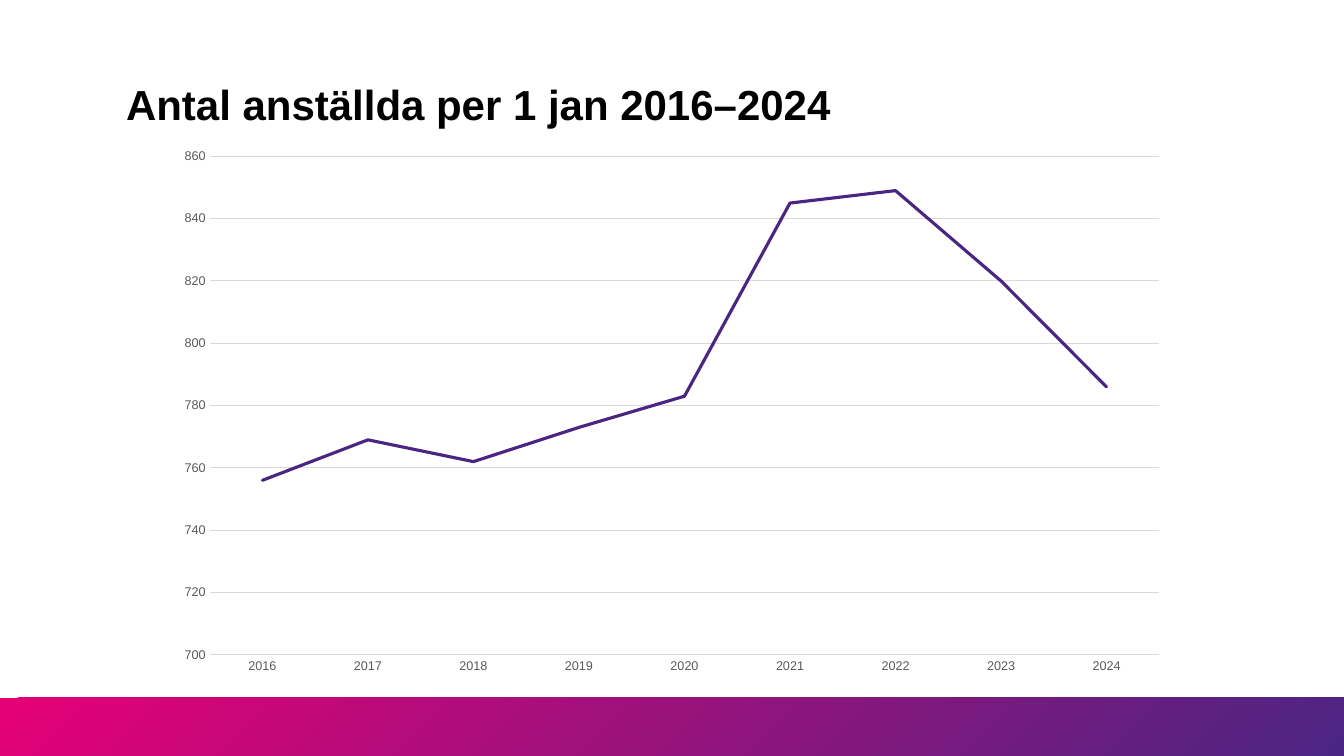
"""Build a slide with a line chart of the number of employees per year."""
from dataclasses import dataclass

import pptx
import pptx.chart.data
import pptx.dml.color
import pptx.enum.chart
import pptx.enum.dml
import pptx.enum.shapes
import pptx.enum.text
import pptx.util

Inches = pptx.util.Inches
Pt = pptx.util.Pt

FONT = "Arial"
PINK, PURPLE = "E50076", "4B2582"
BLACK, LABEL_GREY, LINE_GREY = "000000", "595959", "D9D9D9"
EMPLOYEES = {
    "2016": 756, "2017": 769, "2018": 762, "2019": 773, "2020": 783,
    "2021": 845, "2022": 849, "2023": 820, "2024": 786,
}


@dataclass(frozen=True)
class Box:
    left: float
    top: float
    width: float
    height: float

    def lengths(self) -> tuple:
        return tuple(Inches(v) for v in (self.left, self.top, self.width, self.height))


def set_color(color_format, hex_color: str) -> None:
    color_format.rgb = pptx.dml.color.RGBColor.from_string(hex_color)


def format_font(font, *, size: float, color: str, bold: bool = False) -> None:
    font.name = FONT
    font.size = Pt(size)
    font.bold = bold
    set_color(font.color, color)


def format_line(line, *, color: str, width: float) -> None:
    line.fill.solid()
    set_color(line.fill.fore_color, color)
    line.width = Pt(width)


def write_text(shape, text: str, *, size: float, color: str, bold: bool = False,
               line_spacing: float = 1.0) -> None:
    frame = shape.text_frame
    frame.word_wrap = True
    frame.auto_size = pptx.enum.text.MSO_AUTO_SIZE.NONE
    frame.vertical_anchor = pptx.enum.text.MSO_ANCHOR.MIDDLE
    paragraph = frame.paragraphs[0]
    paragraph.alignment = pptx.enum.text.PP_ALIGN.LEFT
    paragraph.line_spacing = line_spacing
    run = paragraph.add_run()
    run.text = text
    format_font(run.font, size=size, color=color, bold=bold)


def add_footer_band(slide, box: Box) -> None:
    band = slide.shapes.add_shape(pptx.enum.shapes.MSO_SHAPE.RECTANGLE, *box.lengths())
    band.shadow.inherit = False
    band.line.fill.background()
    band.fill.gradient()
    band.fill.gradient_angle = 315
    for stop, color in zip(band.fill.gradient_stops, (PINK, PURPLE)):
        set_color(stop.color, color)


def add_employee_chart(slide, box: Box) -> None:
    data = pptx.chart.data.CategoryChartData()
    data.categories = list(EMPLOYEES)
    data.add_series("Series 1", list(EMPLOYEES.values()))
    chart = slide.shapes.add_chart(
        pptx.enum.chart.XL_CHART_TYPE.LINE, *box.lengths(), data).chart
    chart.has_legend = False
    chart.has_title = False
    format_font(chart.font, size=10, color=BLACK)

    for axis in (chart.category_axis, chart.value_axis):
        axis.major_tick_mark = pptx.enum.chart.XL_TICK_MARK.NONE
        axis.minor_tick_mark = pptx.enum.chart.XL_TICK_MARK.NONE
        format_font(axis.tick_labels.font, size=9, color=LABEL_GREY)

    format_line(chart.category_axis.format.line, color=LINE_GREY, width=0.75)
    values = chart.value_axis
    values.minimum_scale, values.maximum_scale, values.major_unit = 700, 860, 20
    values.format.line.fill.background()
    format_line(values.major_gridlines.format.line, color=LINE_GREY, width=0.75)

    chart.plots[0].vary_by_categories = False
    employees = chart.plots[0].series[0]
    employees.smooth = False
    employees.marker.style = pptx.enum.chart.XL_MARKER_STYLE.NONE
    format_line(employees.format.line, color=PURPLE, width=2.25)
    employees.format.line._get_or_add_ln().set("cap", "rnd")


def main() -> None:
    presentation = pptx.Presentation()
    presentation.slide_width = Inches(13.33)
    presentation.slide_height = Inches(7.5)
    slide = presentation.slides.add_slide(presentation.slide_layouts[5])

    add_footer_band(slide, Box(0, 6.92, 13.33, 0.58))
    add_employee_chart(slide, Box(1.63, 1.37, 10.07, 5.42))

    heading = slide.shapes.title
    heading.left, heading.top, heading.width, heading.height = Box(
        1.15, 0.49, 9.84, 1.14).lengths()
    write_text(heading, "Antal anställda per 1 jan 2016–2024",
               size=30, color=BLACK, bold=True, line_spacing=0.9)

    presentation.save("out.pptx")


if __name__ == "__main__":
    main()
